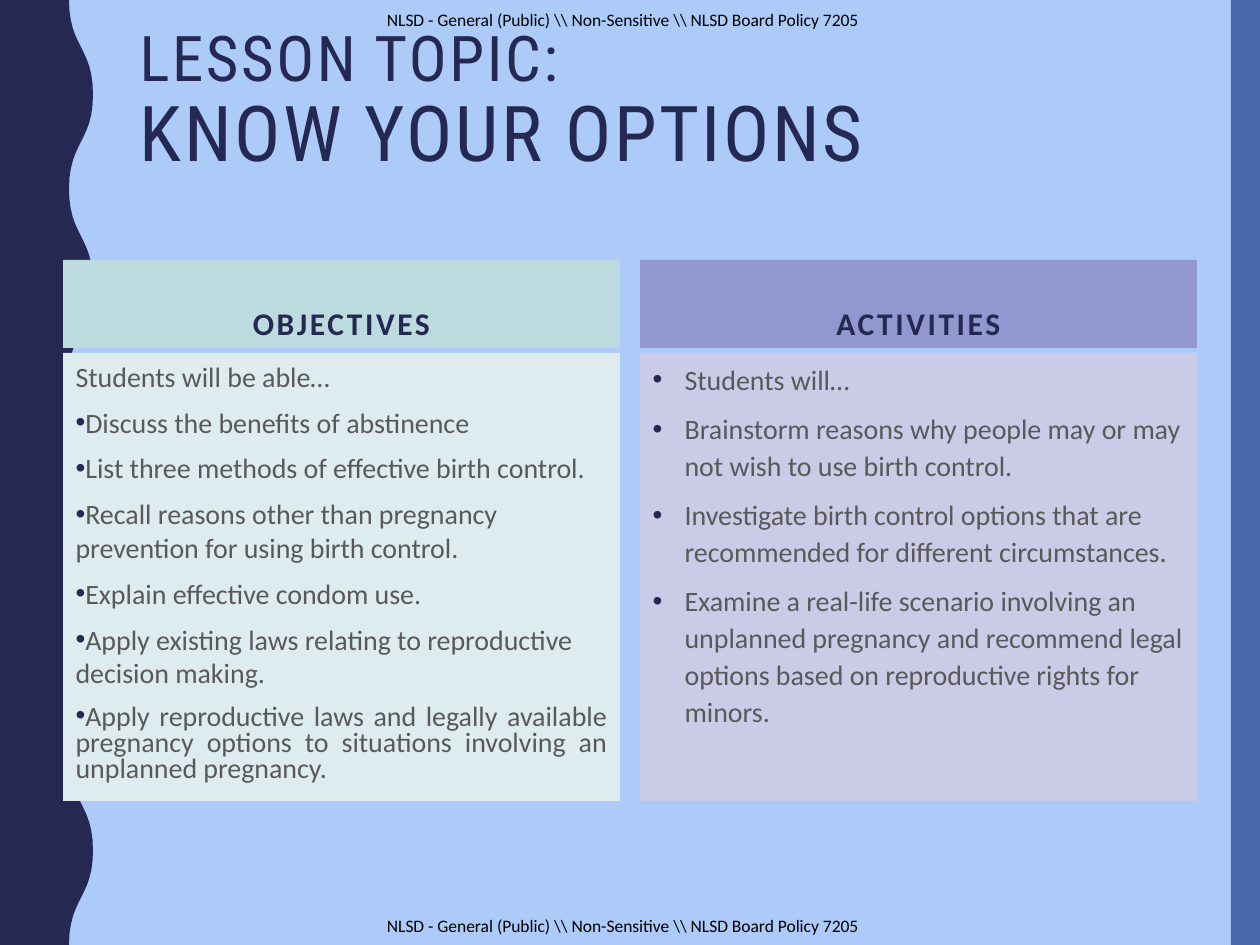
from lxml.etree import SubElement
from pptx import Presentation
from pptx.dml.color import RGBColor
from pptx.enum.shapes import MSO_SHAPE
from pptx.enum.text import MSO_ANCHOR, MSO_AUTO_SIZE, PP_ALIGN
from pptx.oxml.ns import qn
from pptx.util import Pt

PX = 7257.14
WIDTH, HEIGHT = 1260, 945
COLORS = {
    "background": "ACCBF9", "navy": "242852", "edge": "4A66AC",
    "text": "595959", "marking": "000000",
    "objectives_head": "BDDADF", "objectives_body": "DEECEF",
    "activities_head": "9297CF", "activities_body": "C9CBE7",
}
MARKING = "NLSD - General (Public) \\\\ Non-Sensitive \\\\ NLSD Board Policy 7205"
OBJECTIVES = [
    "Students will be able…",
    "Discuss the benefits of abstinence",
    "List three methods of effective birth control.",
    "Recall reasons other than pregnancy prevention for using birth control.",
    "Explain effective condom use.",
    "Apply existing laws relating to reproductive decision making.",
    "Apply reproductive laws and legally available pregnancy options to situations "
    "involving an unplanned pregnancy.",
]
ACTIVITIES = [
    "Students will…",
    "Brainstorm reasons why people may or may not wish to use birth control.",
    "Investigate birth control options that are recommended for different circumstances.",
    "Examine a real-life scenario involving an unplanned pregnancy and recommend legal "
    "options based on reproductive rights for minors.",
]
TITLE_FONT = {"name": "Roboto Condensed", "bold": False}
HEAD_FONT = {"name": "Calibri", "size": Pt(18), "bold": True}
BODY_FONT = {"name": "Calibri", "size": Pt(16), "bold": False}
MARKING_FONT = {"name": "Calibri", "size": Pt(10)}
HEAD_FORMAT = {"alignment": PP_ALIGN.CENTER, "space_before": Pt(7), "line_spacing": 1.0}
OBJECTIVE_FORMAT = {"alignment": PP_ALIGN.LEFT, "space_before": Pt(7), "line_spacing": 1.0}
LAST_OBJECTIVE_FORMAT = {"alignment": PP_ALIGN.JUSTIFY, "space_before": Pt(9.5),
                         "line_spacing": 0.77}
ACTIVITY_FORMAT = {"alignment": PP_ALIGN.LEFT, "space_before": Pt(7), "line_spacing": 1.1}


def px(length):
    return round(length * PX)


def rgb(name):
    return RGBColor.from_string(COLORS[name])


def apply(target, values):
    for name, value in values.items():
        setattr(target, name, value)


def place(shape, box):
    apply(shape, dict(zip(("left", "top", "width", "height"), map(px, box))))


def paint(shape, color):
    shape.fill.solid()
    shape.fill.fore_color.rgb = rgb(color)
    shape.line.fill.background()


def add_run(paragraph, text, font, color, spacing=0):
    run = paragraph.add_run()
    run.text = text
    apply(run.font, font)
    run.font.color.rgb = rgb(color)
    if spacing:
        run.font._element.set("spc", str(spacing))


def set_bullet(paragraph, bullet=True, indent=0):
    properties = paragraph._p.get_or_add_pPr()
    properties.set("marL", str(px(indent)))
    properties.set("indent", str(-px(indent)))
    if bullet:
        color = SubElement(properties, qn("a:buClr"))
        SubElement(color, qn("a:srgbClr"), val=COLORS["navy"])
        SubElement(properties, qn("a:buFont"), typeface="Arial")
        SubElement(properties, qn("a:buChar"), char="•")
    else:
        SubElement(properties, qn("a:buNone"))


def draw_wave(slide, box, waves=5, depth=24, steps=12):
    left, top, width, height = box
    half = height / (2 * waves)
    crest, trough = left + width, left + width - depth
    points = []
    for index in range(2 * waves):
        start, end = (trough, crest) if index % 2 == 0 else (crest, trough)
        for step in range(steps):
            t = step / steps
            across = 3 * t**2 - 2 * t**3
            down = 1.5 * t * (1 - t) + t**3
            points.append((start + (end - start) * across, top + half * (index + down)))
    points += [(trough, top + height), (left, top + height), (left, top)]
    fine = [(x * 100, y * 100) for x, y in points]
    builder = slide.shapes.build_freeform(*fine[0], scale=PX / 100)
    builder.add_line_segments(fine[1:], close=True)
    wave = builder.convert_to_shape()
    wave.shadow.inherit = False
    paint(wave, "navy")
    return wave


def draw_edge(slide, box):
    edge = slide.shapes.add_shape(MSO_SHAPE.RECTANGLE, *map(px, box))
    edge.shadow.inherit = False
    paint(edge, "edge")
    return edge


def draw_marking(slide, box):
    marking = slide.shapes.add_textbox(*map(px, box))
    frame = marking.text_frame
    apply(frame, {"margin_left": 0, "margin_top": 0, "margin_right": 0, "margin_bottom": 0,
                  "word_wrap": False, "auto_size": MSO_AUTO_SIZE.SHAPE_TO_FIT_TEXT})
    add_run(frame.paragraphs[0], MARKING, MARKING_FONT, "marking")
    return marking


def fill_title(title, box):
    place(title, box)
    apply(title.text_frame, {"vertical_anchor": MSO_ANCHOR.TOP, "word_wrap": True,
                             "auto_size": MSO_AUTO_SIZE.NONE})
    paragraph = title.text_frame.paragraphs[0]
    apply(paragraph, {"alignment": PP_ALIGN.LEFT, "line_spacing": 0.9})
    add_run(paragraph, "LESSON TOPIC:", {**TITLE_FONT, "size": Pt(36)}, "navy", 150)
    paragraph.add_line_break()
    add_run(paragraph, "KNOW YOUR OPTIONS", {**TITLE_FONT, "size": Pt(44)}, "navy", 150)


def fill_column(head, body, box, name, heading, items, formats, bullets, indent):
    left, top, width, height = box
    head_height, gap = 88, 5
    body_top = head_height + gap
    place(head, (left, top, width, head_height))
    place(body, (left, top + body_top, width, height - body_top))
    for shape, part, anchor in ((head, "head", MSO_ANCHOR.BOTTOM),
                                (body, "body", MSO_ANCHOR.TOP)):
        paint(shape, f"{name}_{part}")
        apply(shape.text_frame, {"vertical_anchor": anchor, "word_wrap": True,
                                 "auto_size": MSO_AUTO_SIZE.NONE})
    paragraph = head.text_frame.paragraphs[0]
    apply(paragraph, HEAD_FORMAT)
    set_bullet(paragraph, False)
    add_run(paragraph, heading, HEAD_FONT, "navy", 150)
    for index, item in enumerate(items):
        frame = body.text_frame
        paragraph = frame.add_paragraph() if index else frame.paragraphs[0]
        apply(paragraph, formats[index])
        set_bullet(paragraph, bullets[index], indent)
        add_run(paragraph, item, BODY_FONT, "text")


def main():
    presentation = Presentation()
    presentation.slide_width, presentation.slide_height = px(WIDTH), px(HEIGHT)
    slide = presentation.slides.add_slide(presentation.slide_layouts[4])
    slide.background.fill.solid()
    slide.background.fill.fore_color.rgb = rgb("background")

    backdrop = [
        draw_edge(slide, (1231, 0, 29, HEIGHT)),
        draw_wave(slide, (0, 0, 93, HEIGHT)),
        draw_marking(slide, (387, 9, 490, 21)),
        draw_marking(slide, (387, 915, 490, 21)),
    ]
    for shape in reversed(backdrop):
        slide.shapes.element.insert(2, shape.element)

    title, left_head, left_body, right_head, right_body = slide.placeholders
    fill_title(title, (127, 21, 1134, 168))
    fill_column(left_head, left_body, (63, 260, 557, 541), "objectives", "OBJECTIVES",
                OBJECTIVES, [OBJECTIVE_FORMAT] * 6 + [LAST_OBJECTIVE_FORMAT],
                [False] + [True] * 6, 0)
    fill_column(right_head, right_body, (640, 260, 557, 541), "activities", "ACTIVITIES",
                ACTIVITIES, [ACTIVITY_FORMAT] * 4, [True] * 4, 32)
    presentation.save("out.pptx")


if __name__ == "__main__":
    main()
